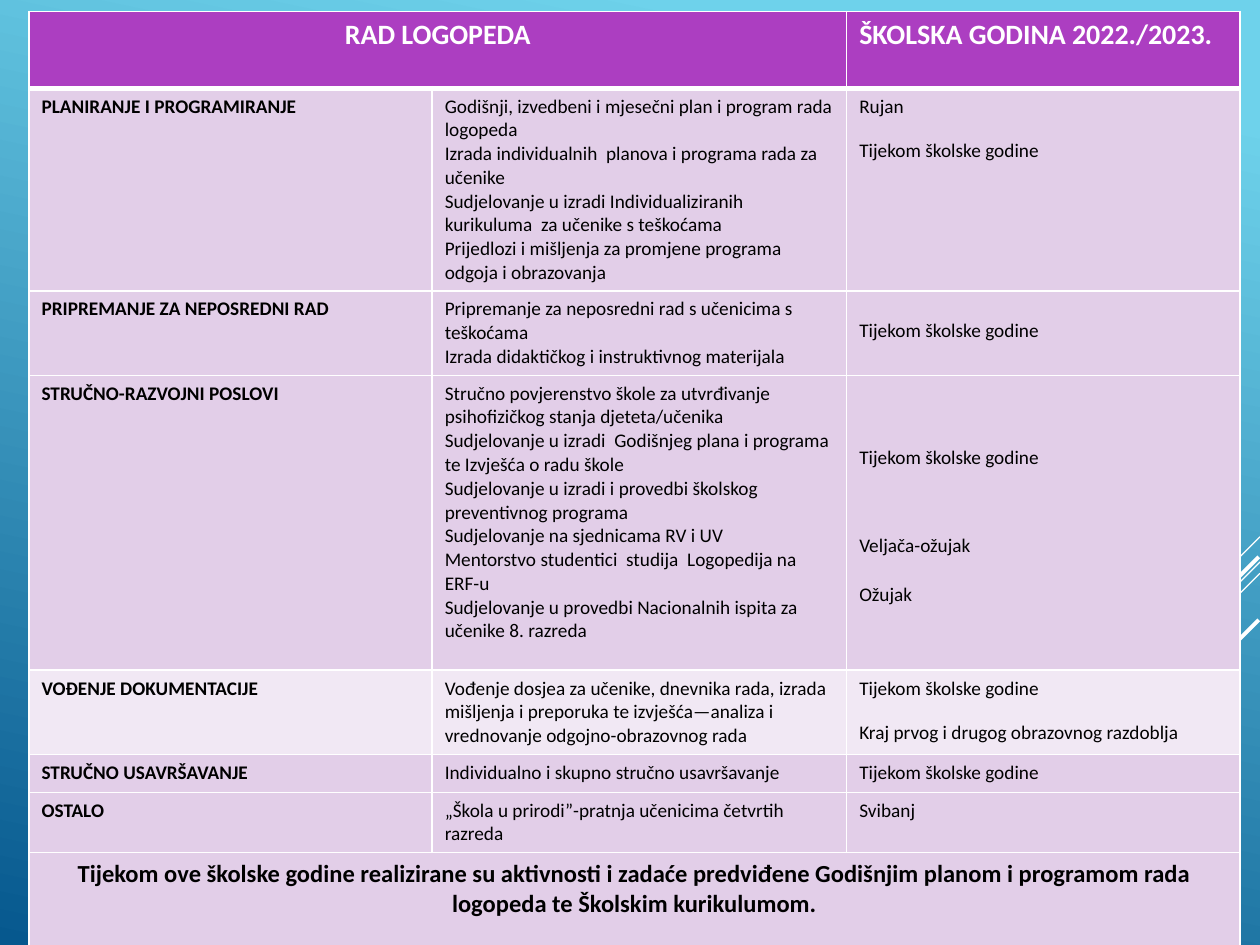
from pptx import Presentation
from pptx.dml.color import RGBColor
from pptx.enum.shapes import MSO_CONNECTOR as Connector
from pptx.enum.text import PP_ALIGN as Align
from pptx.oxml import parse_xml
from pptx.oxml.ns import nsdecls, qn
from pptx.util import Inches, Pt
from lxml import etree

COLORS = {
    "sky": "6ED2EB", "sea": "06588E", "white": "FFFFFF", "black": "000000",
    "header": "AC3EC1", "band": "E2CEE8", "light": "F1E8F4",
}


def rgb(name):
    return RGBColor.from_string(COLORS[name])


def set_border(cell, side, width):
    edge = parse_xml(
        f'<a:{side} {nsdecls("a")} w="{Pt(width)}"><a:solidFill>'
        f'<a:srgbClr val="{COLORS["white"]}"/></a:solidFill></a:{side}>'
    )
    cell._tc.get_or_add_tcPr().append(edge)


prs = Presentation()
prs.slide_width = Inches(10)
prs.slide_height = Inches(7.5)
slide = prs.slides.add_slide(prs.slide_layouts[6])

backdrop = slide.background.fill
backdrop.gradient()
backdrop.gradient_angle = 258
for stop, (position, color) in zip(backdrop.gradient_stops, [(0.1, "sky"), (1, "sea")]):
    stop.position = position
    stop.color.rgb = rgb(color)

diagonals = [
    (10, 4.26, 0.83, 0.75),
    (10, 4.46, 2.7, 0.75),
    (10, 4.55, 1.72, 0.75),
    (9.99, 4.42, 1.57, 2.25),
    (9.99, 4.92, 1.14, 2.25),
]
for x, y, reach, width in diagonals:
    diagonal = slide.shapes.add_connector(
        Connector.STRAIGHT, Inches(x), Inches(y), Inches(x - reach), Inches(y + reach))
    diagonal.line.color.rgb = rgb("white")
    diagonal.line.width = Pt(width)
    etree.SubElement(diagonal._element.spPr, qn("a:effectLst"))

ALL_YEAR = "Tijekom školske godine"
# Each entry: row height, space above the schedule, area, tasks, (gap before, time)
plan = [
    (1.61, 0, "PLANIRANJE I PROGRAMIRANJE", [
        "Godišnji, izvedbeni i mjesečni plan i program rada logopeda",
        "Izrada individualnih  planova i programa rada za učenike",
        "Sudjelovanje u izradi Individualiziranih kurikuluma  za učenike s teškoćama",
        "Prijedlozi i mišljenja za promjene programa odgoja i obrazovanja",
    ], [(0, "Rujan"), (12, ALL_YEAR)]),
    (0.67, 0.17, "PRIPREMANJE ZA NEPOSREDNI RAD", [
        "Pripremanje za neposredni rad s učenicima s teškoćama",
        "Izrada didaktičkog i instruktivnog materijala",
    ], [(0, ALL_YEAR)]),
    (2.34, 0.51, "STRUČNO-RAZVOJNI POSLOVI", [
        "Stručno povjerenstvo škole za utvrđivanje psihofizičkog stanja djeteta/učenika",
        "Sudjelovanje u izradi  Godišnjeg plana i programa te Izvješća o radu škole",
        "Sudjelovanje u izradi i provedbi školskog preventivnog programa",
        "Sudjelovanje na sjednicama RV i UV",
        "Mentorstvo studentici  studija  Logopedija na ERF-u",
        "Sudjelovanje u provedbi Nacionalnih ispita za učenike 8. razreda",
    ], [(0, ALL_YEAR), (37, "Veljača-ožujak"), (14, "Ožujak")]),
    (0.67, 0, "VOĐENJE DOKUMENTACIJE", [
        "Vođenje dosjea za učenike, dnevnika rada, izrada mišljenja i preporuka "
        "te izvješća—analiza i vrednovanje odgojno-obrazovnog rada",
    ], [(0, ALL_YEAR), (12, "Kraj prvog i drugog obrazovnog razdoblja")]),
    (0.3, 0, "STRUČNO USAVRŠAVANJE", ["Individualno i skupno stručno usavršavanje"],
     [(0, ALL_YEAR)]),
    (0.47, 0, "OSTALO", ["„Škola u prirodi”-pratnja učenicima četvrtih razreda"],
     [(0, "Svibanj")]),
]
summary = ("Tijekom ove školske godine realizirane su aktivnosti i zadaće predviđene "
           "Godišnjim planom i programom rada logopeda te Školskim kurikulumom.")

heights = [0.61] + [entry[0] for entry in plan] + [0.77]
last = len(heights) - 1
table = slide.shapes.add_table(
    len(heights), 3, Inches(0.23), Inches(0.09), Inches(9.61), Inches(sum(heights))).table
for column, width in zip(table.columns, [3.2, 3.29, 3.12]):
    column.width = Inches(width)
for row, height in zip(table.rows, heights):
    row.height = Inches(height)

for r in range(len(heights)):
    for c in range(3):
        cell = table.cell(r, c)
        for side in ("lnL", "lnR", "lnT", "lnB"):
            under_header = (r, side) in [(0, "lnB"), (1, "lnT")]
            set_border(cell, side, 3 if under_header else 0.96)
        cell.fill.solid()
        cell.fill.fore_color.rgb = rgb("header" if r == 0 else "light" if r == 4 else "band")
table.cell(0, 0).merge(table.cell(0, 1))
table.cell(last, 0).merge(table.cell(last, 2))

contents = [
    (0, 0, [(0, "RAD LOGOPEDA")], 16, True, "white", Align.CENTER),
    (0, 2, [(0, "ŠKOLSKA GODINA 2022./2023.")], 16, True, "white", Align.LEFT),
    (last, 0, [(0, summary)], 14, True, "black", Align.CENTER),
]
for r, (height, offset, area, tasks, schedule) in enumerate(plan, 1):
    contents += [
        (r, 0, [(0, area)], 11, True, "black", Align.LEFT),
        (r, 1, [(0, task) for task in tasks], 11, False, "black", Align.LEFT),
        (r, 2, schedule, 11, False, "black", Align.LEFT),
    ]
    table.cell(r, 2).margin_top = Inches(0.05 + offset)

for r, c, lines, size, bold, color, align in contents:
    frame = table.cell(r, c).text_frame
    for i, (gap, text) in enumerate(lines):
        paragraph = frame.add_paragraph() if i else frame.paragraphs[0]
        paragraph.alignment = align
        paragraph.space_before = Pt(gap)
        run = paragraph.add_run()
        run.text = text
        run.font.name = "Calibri"
        run.font.size = Pt(size)
        run.font.bold = bold
        run.font.color.rgb = rgb(color)

prs.save("out.pptx")
